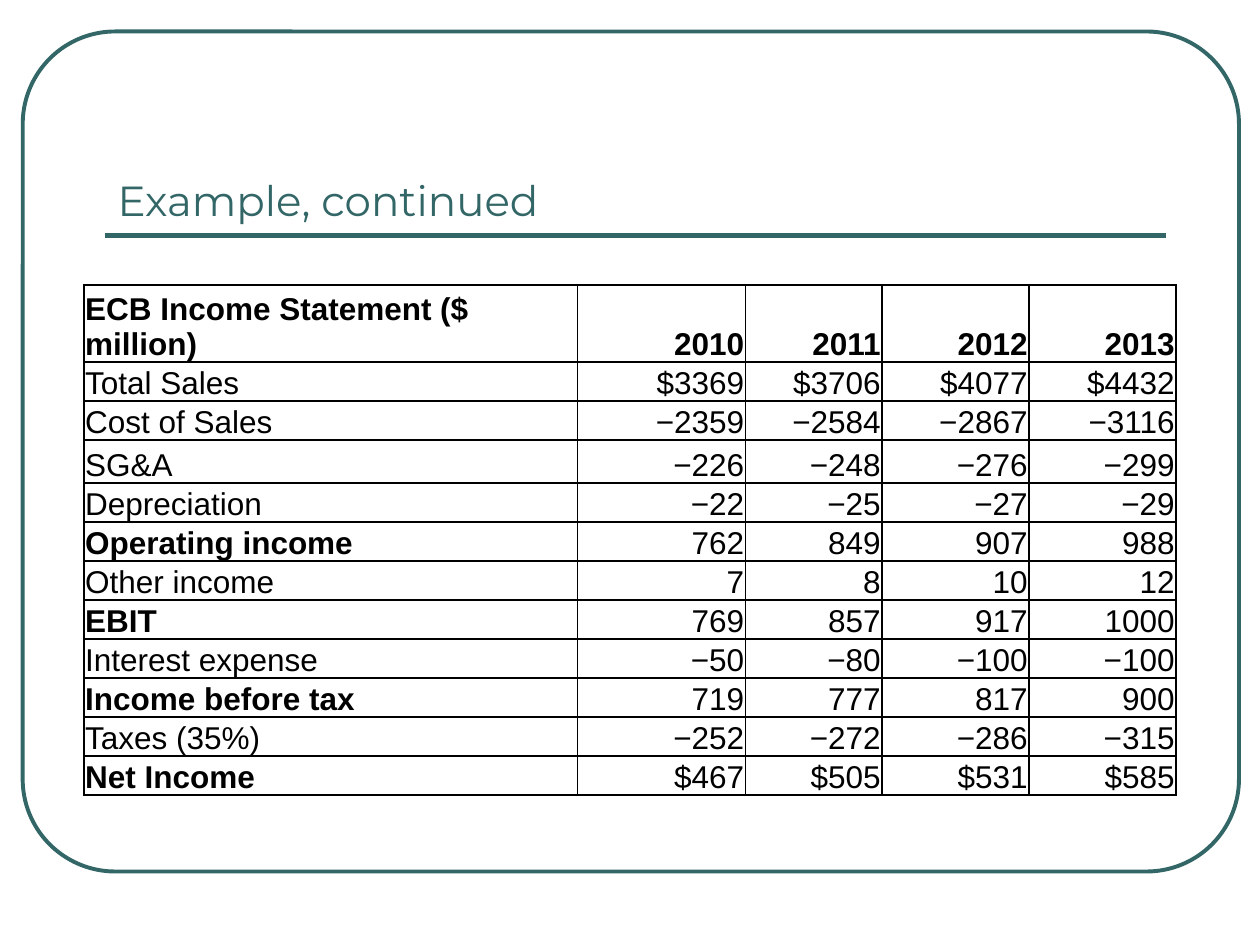
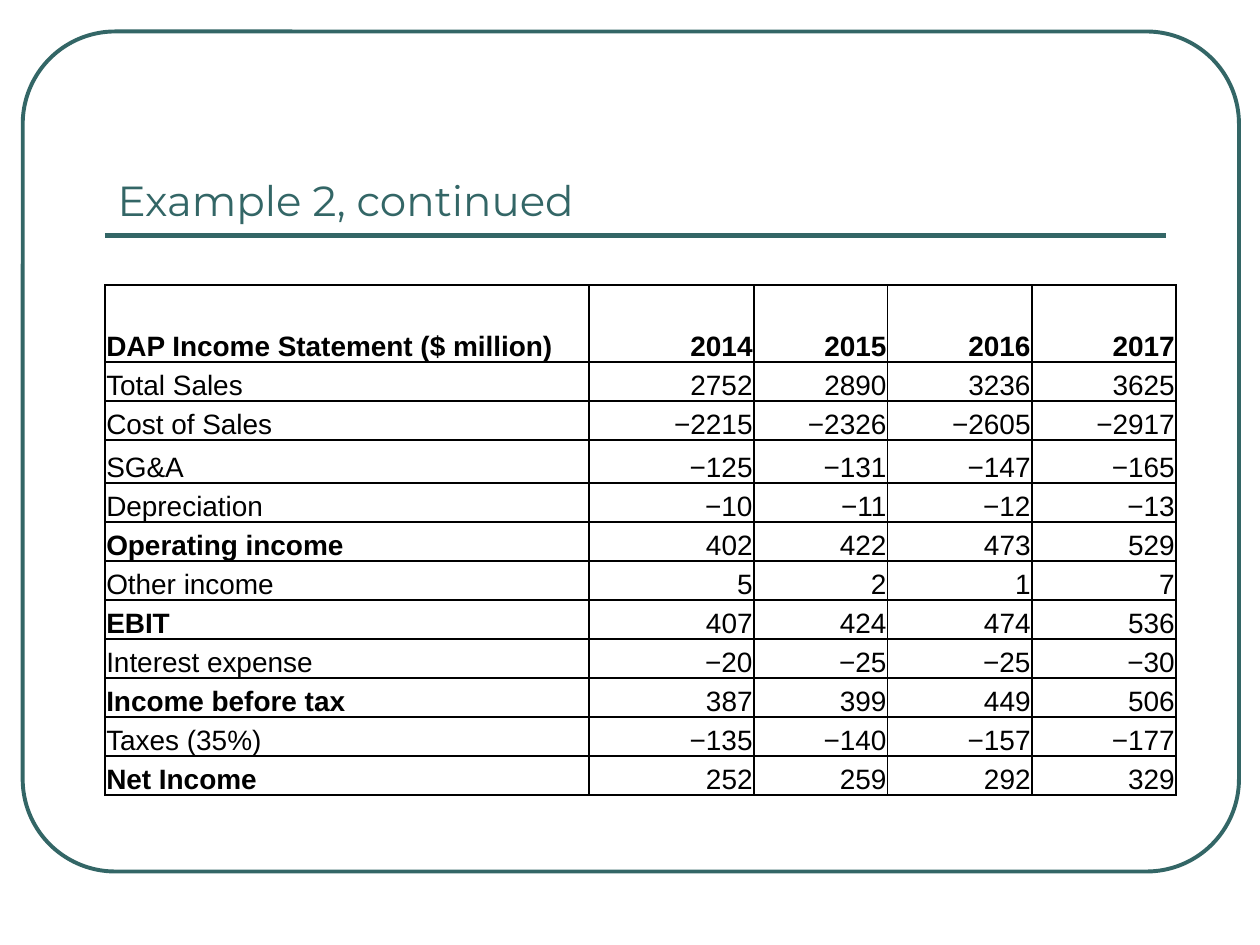
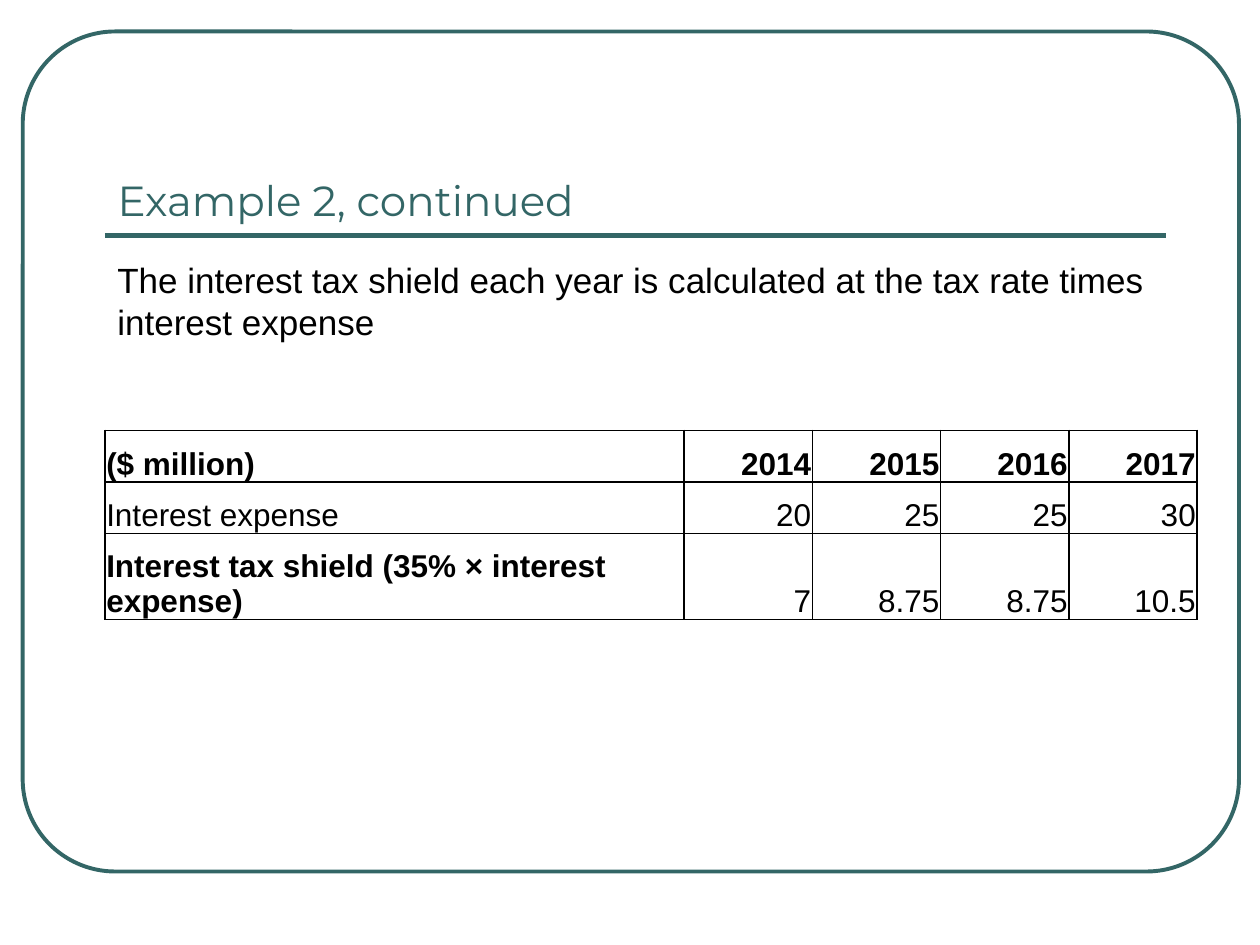
from dataclasses import dataclass

from lxml import etree
from pptx import Presentation
from pptx.dml.color import RGBColor
from pptx.enum.shapes import MSO_CONNECTOR, MSO_SHAPE
from pptx.enum.text import MSO_ANCHOR, PP_ALIGN
from pptx.oxml.ns import qn
from pptx.util import Pt

STRAIGHT = MSO_CONNECTOR.STRAIGHT
ROUNDED = MSO_SHAPE.ROUNDED_RECTANGLE
TOP, BOTTOM = MSO_ANCHOR.TOP, MSO_ANCHOR.BOTTOM
LEFT, RIGHT = PP_ALIGN.LEFT, PP_ALIGN.RIGHT


@dataclass(frozen=True)
class Theme:
    teal: RGBColor = RGBColor(0x33, 0x66, 0x66)
    black: RGBColor = RGBColor(0, 0, 0)
    head_font: str = "Montserrat"
    text_font: str = "Arial"
    head_size: float = 24
    text_size: float = 20
    cell_size: float = 18
    small_size: float = 16
    frame_line: float = 2.25
    rule_line: float = 3
    grid_line: float = 1


THEME = Theme()
MARGIN, WIDTH = 60, 606
TOTALS = {
    "Operating income",
    "EBIT",
    "Income before tax",
    "Net Income",
    "Interest tax shield (35% × interest expense)",
}
ECB_COLS = [282, 96, 78, 84, 84]
DAP_COLS = [col * 612 / 624 for col in ECB_COLS]
SHIELD_COLS = [331] + [73.25] * 4
INCOME_ROWS = [44] + [22.3] * 2 + [24.5] + [22.3] * 8
SHIELD_ROWS = [29.5, 29.5, 49]

ECB = [
    ("ECB Income Statement ($ million)", "2010", "2011", "2012", "2013"),
    ("Total Sales", "$3369", "$3706", "$4077", "$4432"),
    ("Cost of Sales", "−2359", "−2584", "−2867", "−3116"),
    ("SG&A", "−226", "−248", "−276", "−299"),
    ("Depreciation", "−22", "−25", "−27", "−29"),
    ("Operating income", "762", "849", "907", "988"),
    ("Other income", "7", "8", "10", "12"),
    ("EBIT", "769", "857", "917", "1000"),
    ("Interest expense", "−50", "−80", "−100", "−100"),
    ("Income before tax", "719", "777", "817", "900"),
    ("Taxes (35%)", "−252", "−272", "−286", "−315"),
    ("Net Income", "$467", "$505", "$531", "$585"),
]
DAP = [
    ("DAP Income Statement ($ million)", "2014", "2015", "2016", "2017"),
    ("Total Sales", "2752", "2890", "3236", "3625"),
    ("Cost of Sales", "−2215", "−2326", "−2605", "−2917"),
    ("SG&A", "−125", "−131", "−147", "−165"),
    ("Depreciation", "−10", "−11", "−12", "−13"),
    ("Operating income", "402", "422", "473", "529"),
    ("Other income", "5", "2", "1", "7"),
    ("EBIT", "407", "424", "474", "536"),
    ("Interest expense", "−20", "−25", "−25", "−30"),
    ("Income before tax", "387", "399", "449", "506"),
    ("Taxes (35%)", "−135", "−140", "−157", "−177"),
    ("Net Income", "252", "259", "292", "329"),
]
SHIELD = [
    ("($ million)", "2014", "2015", "2016", "2017"),
    ("Interest expense", "20", "25", "25", "30"),
    ("Interest tax shield (35% × interest expense)", "7", "8.75", "8.75", "10.5"),
]


def write(frame, text, font, size, color, bold=False, align=LEFT):
    frame.text = text
    para = frame.paragraphs[0]
    para.alignment = align
    for run in para.runs:
        run.font.name = font
        run.font.size = Pt(size)
        run.font.bold = bold
        run.font.color.rgb = color


def add_frame(slide):
    frame = slide.shapes.add_shape(ROUNDED, Pt(13), Pt(18), Pt(695), Pt(480))
    frame.adjustments[0] = 0.11
    frame.shadow.inherit = False
    frame.fill.background()
    frame.line.color.rgb = THEME.teal
    frame.line.width = Pt(THEME.frame_line)


def add_rule(slide):
    y = Pt(134.5)
    rule = slide.shapes.add_connector(STRAIGHT, Pt(MARGIN), y, Pt(MARGIN + WIDTH), y)
    rule.line.color.rgb = THEME.teal
    rule.line.width = Pt(THEME.rule_line)
    etree.SubElement(rule.element.spPr, qn("a:effectLst"))


def add_slide(deck, title):
    slide = deck.slides.add_slide(deck.slide_layouts[5])
    add_frame(slide)
    add_rule(slide)
    head = slide.shapes.title
    head.left, head.top = Pt(MARGIN), Pt(42)
    head.width, head.height = Pt(WIDTH), Pt(90)
    head.text_frame.vertical_anchor = BOTTOM
    write(head.text_frame, title, THEME.head_font, THEME.head_size, THEME.teal)
    return slide


def add_grid(cell):
    props = cell._tc.get_or_add_tcPr()
    for side in ("lnL", "lnR", "lnT", "lnB"):
        line = etree.SubElement(props, qn(f"a:{side}"), w=str(Pt(THEME.grid_line)))
        fill = etree.SubElement(line, qn("a:solidFill"))
        etree.SubElement(fill, qn("a:srgbClr"), val=str(THEME.black))


def fill_cell(cell, text, size, bold, align):
    add_grid(cell)
    cell.fill.background()
    cell.margin_left = cell.margin_right = cell.margin_top = Pt(0.72)
    cell.margin_bottom = 0
    cell.vertical_anchor = BOTTOM
    write(cell.text_frame, text, THEME.text_font, size, THEME.black, bold, align)


def add_table(slide, data, left, top, cols, rows, size):
    shape = slide.shapes.add_table(
        len(rows), len(cols), Pt(left), Pt(top), Pt(sum(cols)), Pt(sum(rows)))
    table = shape.table
    for col, width in zip(table.columns, cols):
        col.width = Pt(width)
    for row, height in zip(table.rows, rows):
        row.height = Pt(height)
    for r, items in enumerate(data):
        for c, text in enumerate(items):
            bold = r == 0 or text in TOTALS
            fill_cell(table.cell(r, c), text, size, bold, RIGHT if c else LEFT)


def add_text(slide, text):
    box = slide.shapes.add_textbox(Pt(MARGIN), Pt(144), Pt(WIDTH), Pt(168))
    frame = box.text_frame
    frame.word_wrap = True
    frame.vertical_anchor = TOP
    write(frame, text, THEME.text_font, THEME.text_size, THEME.black)


def main():
    deck = Presentation()
    deck.slide_width, deck.slide_height = Pt(720), Pt(540)

    slide = add_slide(deck, "Example, continued")
    add_table(slide, ECB, 48, 163, ECB_COLS, INCOME_ROWS, THEME.cell_size)

    slide = add_slide(deck, "Example 2, continued")
    add_table(slide, DAP, MARGIN, 163, DAP_COLS, INCOME_ROWS, THEME.small_size)

    slide = add_slide(deck, "Example 2, continued")
    add_table(slide, SHIELD, MARGIN, 246, SHIELD_COLS, SHIELD_ROWS, THEME.cell_size)
    add_text(slide, "The interest tax shield each year is calculated "
                    "at the tax rate times interest expense")

    deck.save("out.pptx")


if __name__ == "__main__":
    main()
